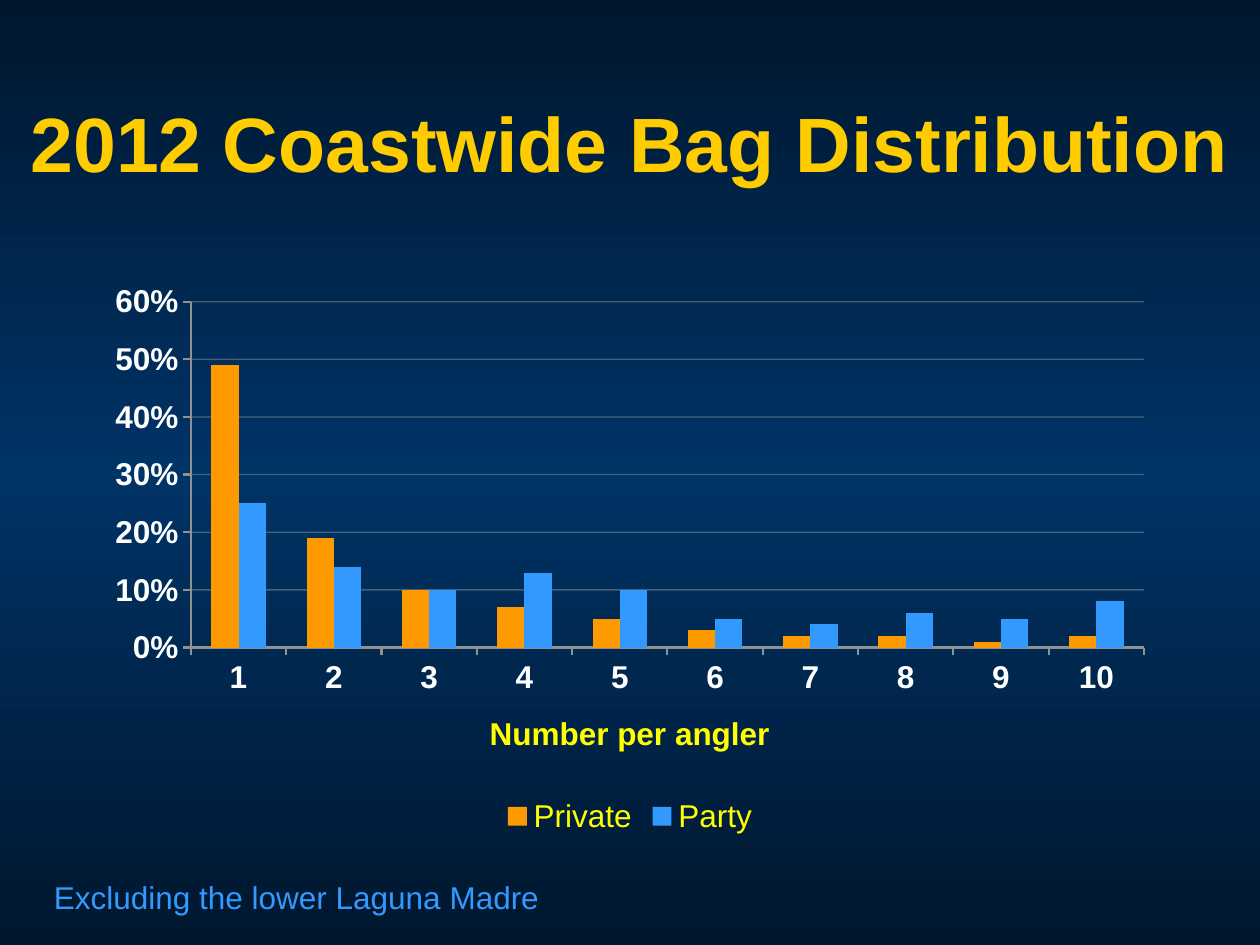
from copy import deepcopy

from lxml import etree
from pptx import Presentation
from pptx.chart.data import CategoryChartData
from pptx.dml.color import RGBColor
from pptx.enum.chart import XL_CHART_TYPE, XL_LEGEND_POSITION, XL_TICK_MARK
from pptx.enum.text import MSO_ANCHOR, PP_ALIGN
from pptx.oxml import parse_xml
from pptx.oxml.ns import nsdecls, qn
from pptx.util import Inches, Pt

COLUMNS = XL_CHART_TYPE.COLUMN_CLUSTERED
BOTTOM = XL_LEGEND_POSITION.BOTTOM
OUTSIDE, NO_TICK = XL_TICK_MARK.OUTSIDE, XL_TICK_MARK.NONE
CENTER, LEFT = PP_ALIGN.CENTER, PP_ALIGN.LEFT
MIDDLE, TOP = MSO_ANCHOR.MIDDLE, MSO_ANCHOR.TOP

# Content
TITLE = "2012 Coastwide Bag Distribution"
FOOTNOTE = "Excluding the lower Laguna Madre"
AXIS_TITLE = "Number per angler"
BAG_SIZES = [str(number) for number in range(1, 11)]
SHARES = {
    "Private": (0.49, 0.19, 0.10, 0.07, 0.05, 0.03, 0.02, 0.02, 0.01, 0.02),
    "Party": (0.25, 0.14, 0.10, 0.13, 0.10, 0.05, 0.04, 0.06, 0.05, 0.08),
}

# Places: left, top, width, height in inches; plot area as shares of the chart
TITLE_BOX = (0, 0.5, 10, 1.25)
CHART_BOX = (0.75, 2.17, 8.5, 4.5)
FOOTNOTE_BOX = (0.33, 6.92, 4.09, 0.4)
PLOT_AREA = {"x": 0.09, "y": 0.05, "w": 0.89, "h": 0.61}

THEME = {
    "font": "Arial",
    "title_size": 44,
    "body_size": 18,
    "title": "FFCC00",
    "accent": "FFFF00",
    "labels": "FFFFFF",
    "footnote": "3399FF",
    "axis": "919191",
    "series": ("FF9900", "3399FF"),
    "background": ((0, "00172E"), (50, "003366"), (100, "00172E")),
}


def style_font(font, size, color, bold=False):
    font.name = THEME["font"]
    font.size = Pt(size)
    font.bold = bold
    font.color.rgb = RGBColor.from_string(color)


def style_line(line, width):
    line.color.rgb = RGBColor.from_string(THEME["axis"])
    line.width = Pt(width)


def paint_background(slide):
    fill = slide.background.fill
    fill.gradient()
    fill.gradient_angle = 90
    stops = slide.background._cSld.find(".//" + qn("a:gsLst"))
    template = deepcopy(stops[0])
    for stop in list(stops):
        stops.remove(stop)
    for position, color in THEME["background"]:
        stop = deepcopy(template)
        stop.set("pos", str(position * 1000))
        for child in list(stop):
            stop.remove(child)
        etree.SubElement(stop, qn("a:srgbClr")).set("val", color)
        stops.append(stop)


def add_text(slide, box, text, size, color, bold, align, anchor, wrap):
    shape = slide.shapes.add_textbox(*map(Inches, box))
    frame = shape.text_frame
    frame.word_wrap = wrap
    frame.vertical_anchor = anchor
    paragraph = frame.paragraphs[0]
    paragraph.alignment = align
    run = paragraph.add_run()
    run.text = text
    style_font(run.font, size, color, bold)


def add_bag_chart(slide):
    data = CategoryChartData(number_format="0%")
    data.categories = BAG_SIZES
    for name, values in SHARES.items():
        data.add_series(name, values)
    chart = slide.shapes.add_chart(COLUMNS, *map(Inches, CHART_BOX), data).chart
    size = THEME["body_size"]
    style_font(chart.font, size, THEME["accent"])
    chart.has_title = False

    # Columns
    plot = chart.plots[0]
    plot.gap_width = 150
    plot.overlap = 0
    plot.vary_by_categories = False
    for series, color in zip(plot.series, THEME["series"]):
        series.format.fill.solid()
        series.format.fill.fore_color.rgb = RGBColor.from_string(color)

    # Axes
    for axis in (chart.category_axis, chart.value_axis):
        axis.major_tick_mark = OUTSIDE
        axis.minor_tick_mark = NO_TICK
        style_font(axis.tick_labels.font, size, THEME["labels"], bold=True)
        style_line(axis.format.line, 1.25)
    title_frame = chart.category_axis.axis_title.text_frame
    run = title_frame.paragraphs[0].add_run()
    run.text = AXIS_TITLE
    style_font(run.font, size, THEME["accent"], bold=True)

    value_axis = chart.value_axis
    value_axis.minimum_scale, value_axis.maximum_scale = 0, 0.6
    value_axis.major_unit = 0.1
    value_axis.tick_labels.number_format = "0%"
    value_axis.tick_labels.number_format_is_linked = False
    gridlines = value_axis.major_gridlines
    style_line(gridlines.format.line, 0.75)
    grid_color = value_axis._element.find(
        qn("c:majorGridlines")).find(".//" + qn("a:srgbClr"))
    etree.SubElement(grid_color, qn("a:alpha")).set("val", "50000")

    # Legend
    chart.has_legend = True
    chart.legend.position = BOTTOM
    chart.legend.include_in_layout = False
    style_font(chart.legend.font, size, THEME["accent"])

    # Fixed plot area
    modes = '<c:xMode val="edge"/><c:yMode val="edge"/>'
    sides = "".join(f'<c:{side} val="{share}"/>' for side, share in PLOT_AREA.items())
    layout = parse_xml(
        f'<c:layout {nsdecls("c")}><c:manualLayout><c:layoutTarget val="inner"/>'
        f"{modes}{sides}</c:manualLayout></c:layout>")
    plot_area = chart._chartSpace.find(".//" + qn("c:plotArea"))
    for old_layout in plot_area.findall(qn("c:layout")):
        plot_area.remove(old_layout)
    plot_area.insert(0, layout)


def main():
    presentation = Presentation()
    presentation.slide_width, presentation.slide_height = Inches(10), Inches(7.5)
    slide = presentation.slides.add_slide(presentation.slide_layouts[6])
    paint_background(slide)
    add_text(slide, TITLE_BOX, TITLE, THEME["title_size"], THEME["title"],
             True, CENTER, MIDDLE, True)
    add_bag_chart(slide)
    add_text(slide, FOOTNOTE_BOX, FOOTNOTE, THEME["body_size"], THEME["footnote"],
             False, LEFT, TOP, False)
    presentation.save("out.pptx")


if __name__ == "__main__":
    main()
